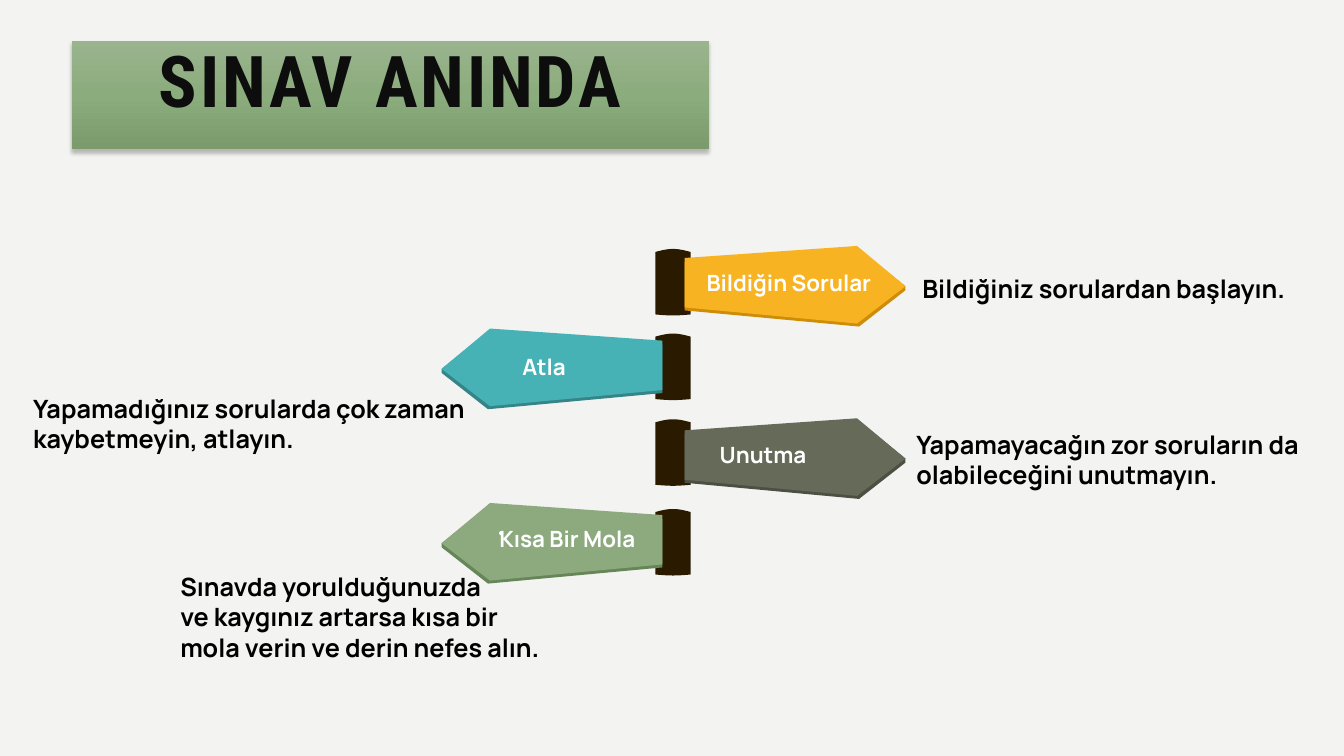
from math import pi, sin

from lxml.etree import SubElement
from pptx import Presentation
from pptx.dml.color import RGBColor
from pptx.enum.shapes import MSO_SHAPE
from pptx.enum.text import MSO_ANCHOR, MSO_AUTO_SIZE, PP_ALIGN
from pptx.oxml import parse_xml
from pptx.oxml.ns import nsdecls, qn
from pptx.util import Inches, Pt

HUES = {
    "back": "F3F3F2", "ink": "000000", "title": "0D0D0D", "white": "FFFFFF",
    "post": "2A1A00",
    "gold": "F8B323", "gold_rim": "CE8D07",
    "teal": "46B2B5", "teal_rim": "358588",
    "gray": "656A59", "gray_rim": "4C5043",
    "green": "8CAA7E", "green_rim": "678658",
}
FADE = [(0, "9AB48E"), (50, "8BAC7C"), (100, "7B9B6C")]

# Board outlines, measured outward from the post
FACE = [(1.71, 0), (0, 0.12), (0, 0.61), (1.71, 0.77), (2.19, 0.4)]
RIM = [(1.73, 0), (0, 0.13), (0, 0.61), (1.73, 0.77), (2.19, 0.41), (2.19, 0.37)]

# Post outline: domed top, then a slightly bowed foot
ARC = [(0.35 * k / 12, sin(pi * k / 12)) for k in range(13)]
POST = [(x, 0.03 - 0.03 * h) for x, h in ARC]
POST += [(x, 0.65 + 0.01 * h) for x, h in reversed(ARC)]


class Board:
    def __init__(self, slide):
        self.slide = slide
        self.font = "Manrope"
        fill = slide.background.fill
        fill.solid()
        fill.fore_color.rgb = self.hue("back")

    def hue(self, name):
        return RGBColor.from_string(HUES[name])

    def paint(self, shape, name):
        shape.shadow.inherit = False
        shape.fill.solid()
        shape.fill.fore_color.rgb = self.hue(name)
        shape.line.fill.background()

    def run(self, para, text, size, name, font=None):
        run = para.add_run()
        run.text = text
        run.font.size = Pt(size)
        run.font.name = font or self.font
        run.font.bold = True
        run.font.color.rgb = self.hue(name)
        return run

    def text(self, box, lines, size, name, wrap=False, align=PP_ALIGN.LEFT):
        frame = self.slide.shapes.add_textbox(*map(Inches, box)).text_frame
        frame.word_wrap = wrap
        frame.auto_size = MSO_AUTO_SIZE.SHAPE_TO_FIT_TEXT
        for i, line in enumerate(lines):
            para = frame.add_paragraph() if i else frame.paragraphs[0]
            para.alignment = align
            self.run(para, line, size, name)

    def free(self, left, top, points, name, side=1):
        spots = [(Inches(left + side * x), Inches(top + y)) for x, y in points]
        path = self.slide.shapes.build_freeform(*spots[0])
        path.add_line_segments(spots[1:], close=True)
        self.paint(path.convert_to_shape(), name)

    def sign(self, side, post, top, name, label, box):
        left = 6.79 if side > 0 else 6.57
        self.free(6.5, post, POST, "post")
        self.free(left, top + 0.03, RIM, name + "_rim", side)
        self.free(left, top, FACE, name, side)
        align = PP_ALIGN.LEFT if side > 0 else PP_ALIGN.RIGHT
        self.text(box, [label], 16, "white", align=align)

    def dot(self, left, top, size):
        box = map(Inches, (left, top, size, size))
        self.paint(self.slide.shapes.add_shape(MSO_SHAPE.OVAL, *box), "white")

    def title(self, box, text):
        shape = self.slide.shapes.add_shape(MSO_SHAPE.RECTANGLE, *map(Inches, box))
        self.paint(shape, "green")
        props = shape.fill._xPr
        stops = "".join(
            f'<a:gs pos="{pos * 1000}"><a:srgbClr val="{tone}"/></a:gs>'
            for pos, tone in FADE)
        fade = parse_xml(
            f'<a:gradFill {nsdecls("a")} rotWithShape="1"><a:gsLst>{stops}'
            '</a:gsLst><a:lin ang="5400000" scaled="0"/></a:gradFill>')
        props.replace(props.find(qn("a:solidFill")), fade)
        # Soft shadow below the banner
        cast = SubElement(props.find(qn("a:effectLst")), qn("a:outerShdw"),
                          blurRad=str(Pt(3)), dist=str(Pt(2)), dir="5400000",
                          algn="ctr", rotWithShape="0")
        tone = SubElement(cast, qn("a:srgbClr"), val="000000")
        SubElement(tone, qn("a:alpha"), val="25000")
        frame = shape.text_frame
        frame.word_wrap = True
        frame.vertical_anchor = MSO_ANCHOR.TOP
        para = frame.paragraphs[0]
        para.alignment = PP_ALIGN.CENTER
        para.line_spacing = 0.9
        run = self.run(para, text, 51, "title", "Roboto Condensed")
        run.font._element.set("spc", "200")


def main():
    deck = Presentation()
    deck.slide_width, deck.slide_height = Inches(13.33), Inches(7.5)
    board = Board(deck.slides.add_slide(deck.slide_layouts[6]))

    # Advice beside each sign
    notes = [
        ((9.05, 2.66, 3.94, 0.4), True, ["Bildiğiniz sorulardan başlayın."]),
        ((8.99, 4.21, 4.14, 0.71), False,
         ["Yapamayacağın zor soruların da", "olabileceğini unutmayın."]),
        ((0.23, 3.85, 4.48, 0.71), False,
         ["Yapamadığınız sorularda çok zaman", "kaybetmeyin, atlayın."]),
        ((1.69, 5.62, 4.03, 1.01), True,
         ["Sınavda yorulduğunuzda", "ve kaygınız artarsa kısa bir",
          "mola verin ve derin nefes alın."]),
    ]
    for box, wrap, lines in notes:
        board.text(box, lines, 18, "ink", wrap)

    # Signpost, top to bottom
    signs = [
        (1, 2.47, 2.44, "gold", "Bildiğin Sorular", (6.91, 2.62, 1.86, 0.37)),
        (-1, 3.31, 3.26, "teal", "Atla", (5.07, 3.45, 0.64, 0.37)),
        (1, 4.16, 4.15, "gray", "Unutma", (7.04, 4.33, 1.07, 0.37)),
        (-1, 5.05, 4.99, "green", "Kısa Bir Mola", (4.81, 5.16, 1.59, 0.37)),
    ]
    for sign in signs:
        board.sign(*sign)
    board.dot(4.95, 5.27, 0.04)

    # Banner
    board.title((0.71, 0.41, 6.32, 1.07), "SINAV ANINDA")
    deck.save("out.pptx")


if __name__ == "__main__":
    main()
